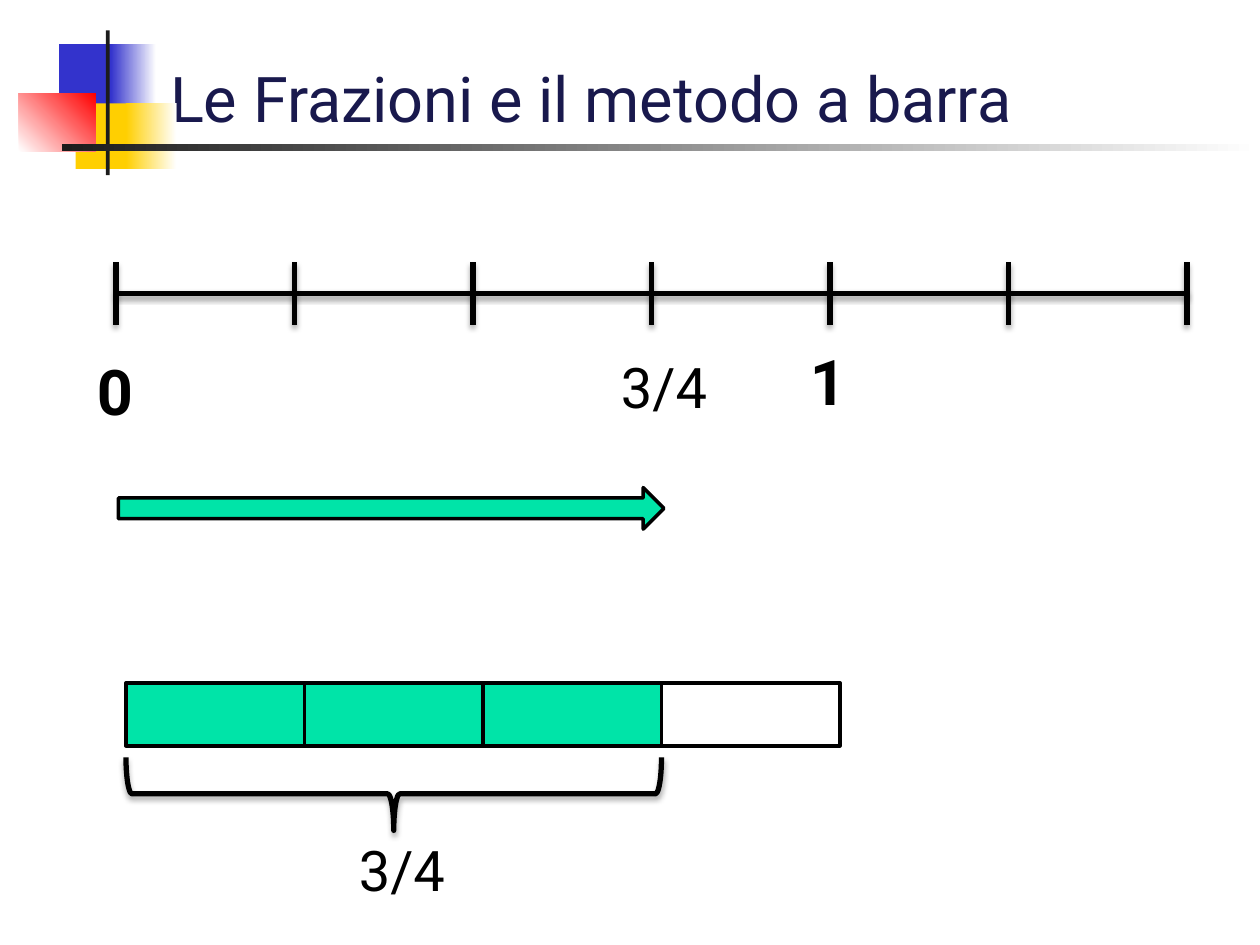
from pptx import Presentation
from pptx.dml.color import RGBColor
from pptx.enum.shapes import MSO_CONNECTOR, MSO_SHAPE
from pptx.enum.text import MSO_ANCHOR, MSO_AUTO_SIZE, PP_ALIGN
from pptx.oxml import parse_xml
from pptx.oxml.ns import nsdecls
from pptx.util import Inches, Pt

BLACK = RGBColor(0x00, 0x00, 0x00)
WHITE = RGBColor(0xFF, 0xFF, 0xFF)
NAVY = RGBColor(0x19, 0x19, 0x4D)
GREEN = RGBColor(0x00, 0xE4, 0xA8)
BLUE = RGBColor(0x33, 0x33, 0xCC)
YELLOW = RGBColor(0xFF, 0xCF, 0x01)
RED = RGBColor(0xFF, 0x00, 0x00)
DARK = RGBColor(0x1C, 0x1C, 0x1C)
FONT = "Roboto"

# Content
TITLE = "Le Frazioni e il metodo a barra"
LABELS = [  # text, left, top, width, height, format
    ("0", 0.67, 2.75, 0.5, 0.71, dict(size=36, bold=True)),
    ("1", 6.33, 2.67, 0.5, 0.71, dict(size=36, bold=True)),
    ("3/4", 4.83, 2.75, 1.21, 0.64, dict(size=32)),
    ("3/4", 2.75, 6.58, 1.45, 0.64, dict(size=32)),
]
PARTS, SHADED, INTERVALS = 4, 3, 6
ORNAMENT = [  # left, top, width, height, colours, gradient angle
    (0.47, 0.35, 0.48, 0.52, (BLUE,), 0),
    (0.88, 0.35, 0.36, 0.52, (BLUE, WHITE), 0),
    (0.6, 0.82, 0.46, 0.52, (YELLOW,), 0),
    (1, 0.82, 0.4, 0.52, (YELLOW, WHITE), 0),
    (0.15, 0.74, 0.61, 0.46, (WHITE, RED), 45),
    (0.84, 0.24, 0.03, 1.15, (DARK,), 0),
    (0.49, 1.14, 9.51, 0.06, (DARK, WHITE), 0),
]

# Grid: one quarter of the unit
UNIT = 17 / 12
AXIS_X, AXIS_Y, TICK = 0.92, 2.33, 0.25
BAR_X, BAR_Y, BAR_H = 1, 5.42, 0.5

prs = Presentation()
prs.slide_width, prs.slide_height = Inches(10), Inches(7.5)
s = prs.slides.add_slide(prs.slide_layouts[5])


def add_shadow(sp):
    sp._element.spPr.append(parse_xml(
        f'<a:effectLst {nsdecls("a")}><a:outerShdw blurRad="{Pt(3.1)}" '
        f'dist="{Pt(1.8)}" dir="5400000" rotWithShape="0"><a:srgbClr val="000000">'
        '<a:alpha val="35000"/></a:srgbClr></a:outerShdw></a:effectLst>'))


def write(sp, text, size=32, bold=False, color=BLACK):
    tf = sp.text_frame
    tf.word_wrap = True
    tf.auto_size = MSO_AUTO_SIZE.SHAPE_TO_FIT_TEXT
    tf.vertical_anchor = MSO_ANCHOR.TOP
    p = tf.paragraphs[0]
    p.alignment = PP_ALIGN.LEFT
    r = p.add_run()
    r.text = text
    r.font.name, r.font.size, r.font.bold = FONT, Pt(size), bold
    r.font.color.rgb = color


def add_line(x1, y1, x2, y2):
    line = s.shapes.add_connector(MSO_CONNECTOR.STRAIGHT, *map(Inches, (x1, y1, x2, y2)))
    line.line.color.rgb, line.line.width = BLACK, Pt(3)
    add_shadow(line)


def add_shape(kind, box, colors=(), angle=0, line=None):
    sp = s.shapes.add_shape(kind, *map(Inches, box))
    if len(colors) == 2:
        sp.fill.gradient()
        sp.fill.gradient_angle = angle
        for stop, color in zip(sp.fill.gradient_stops, colors):
            stop.color.rgb = color
    elif colors:
        sp.fill.solid()
        sp.fill.fore_color.rgb = colors[0]
    else:
        sp.fill.background()
    if line:
        sp.line.color.rgb, sp.line.width = BLACK, Pt(line)
    else:
        sp.line.fill.background()
    sp.shadow.inherit = False
    return sp


# Title
title = s.shapes.title
title.left, title.top, title.width, title.height = map(Inches, (1.25, 0.42, 7.25, 0.71))
write(title, TITLE, size=36, color=NAVY)

# Number line
add_line(AXIS_X, AXIS_Y, AXIS_X + INTERVALS * UNIT, AXIS_Y)
for i in range(INTERVALS + 1):
    x = AXIS_X + i * UNIT
    add_line(x, AXIS_Y - TICK, x, AXIS_Y + TICK)

# Labels
for text, x, y, w, h, style in LABELS:
    write(s.shapes.add_textbox(*map(Inches, (x, y, w, h))), text, **style)

# Arrow and fraction bar
add_shape(MSO_SHAPE.RIGHT_ARROW, (0.94, 3.87, 4.33, 0.33), (GREEN,), line=2)
for i in range(PARTS):
    add_shape(MSO_SHAPE.RECTANGLE, (BAR_X + i * UNIT, BAR_Y, UNIT, BAR_H),
              (GREEN if i < SHADED else WHITE,), line=2)

# Brace under the shaded parts, turned on its centre
span, depth = SHADED * UNIT, 0.58
cx, cy = BAR_X + span / 2, 6.3
brace = add_shape(MSO_SHAPE.LEFT_BRACE, (cx - depth / 2, cy - span / 2, depth, span), line=3)
brace.rotation = 270
brace.shadow.inherit = True
add_shadow(brace)

# Corner ornament and rule, in front of the title
for *box, colors, angle in ORNAMENT:
    add_shape(MSO_SHAPE.RECTANGLE, box, colors, angle)

prs.save("out.pptx")
